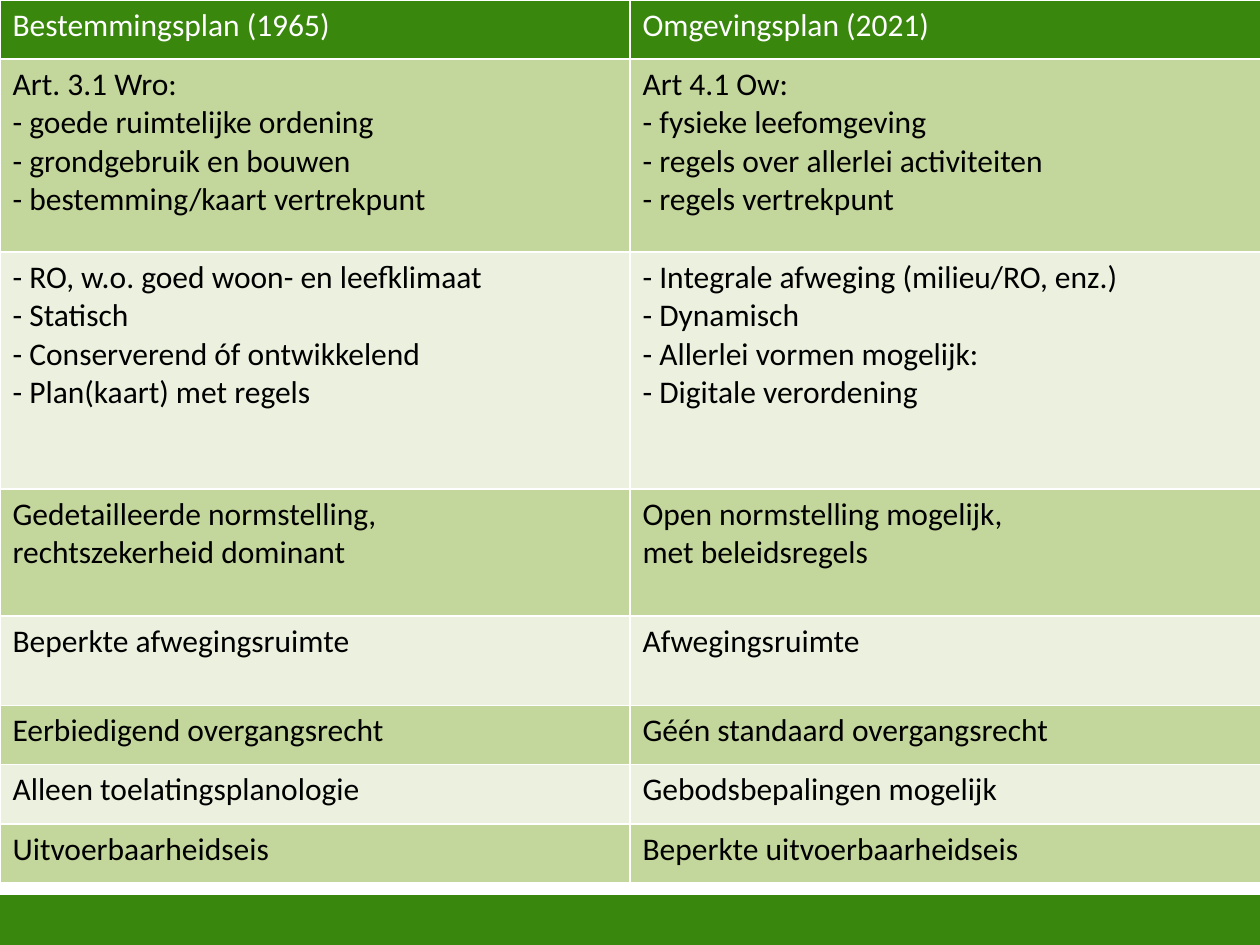
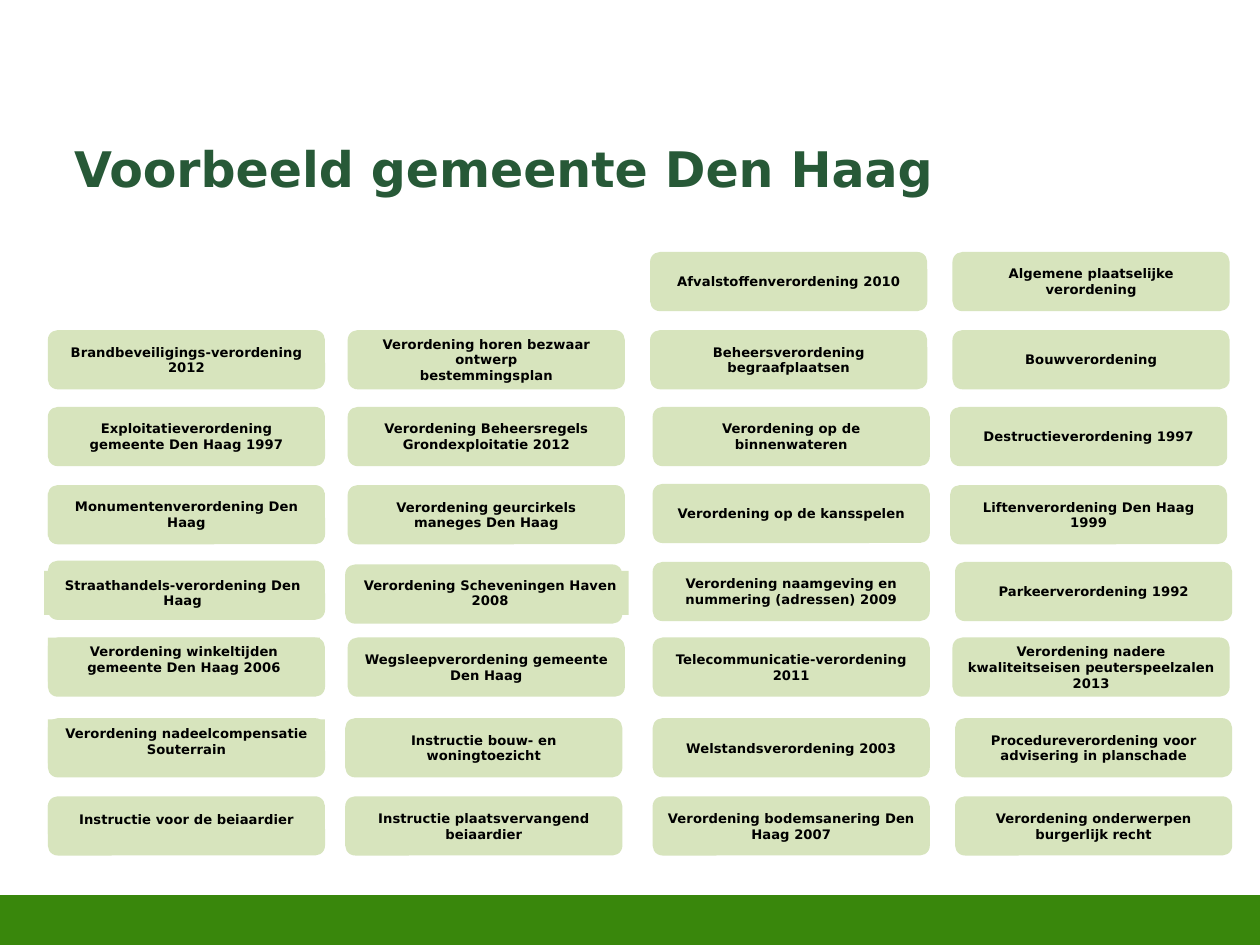
from lxml.etree import SubElement
from pptx import Presentation
from pptx.dml.color import RGBColor
from pptx.enum.shapes import MSO_SHAPE as Preset
from pptx.enum.text import MSO_ANCHOR as Anchor, MSO_AUTO_SIZE as AutoSize, PP_ALIGN as Align
from pptx.oxml.ns import qn
from pptx.util import Inches, Pt

GREEN, MOSS, PALE, BOX = "39870C", "C3D69B", "EBF1DE", "D7E4BD"
WHITE, BLACK, TITLE = "FFFFFF", "000000", "275937"

PLANS = [
    ("Bestemmingsplan (1965)", "Omgevingsplan (2021)"),
    ("Art. 3.1 Wro:\v- goede ruimtelijke ordening\v- grondgebruik en bouwen\v- bestemming/kaart vertrekpunt",
     "Art 4.1 Ow:\v- fysieke leefomgeving\v- regels over allerlei activiteiten\v- regels vertrekpunt"),
    ("- RO, w.o. goed woon- en leefklimaat\v- Statisch\v- Conserverend óf ontwikkelend\n- Plan(kaart) met regels",
     "- Integrale afweging (milieu/RO, enz.)\v- Dynamisch\v- Allerlei vormen mogelijk:\v- Digitale verordening"),
    ("Gedetailleerde normstelling,\vrechtszekerheid dominant",
     "Open normstelling mogelijk,\vmet beleidsregels"),
    ("Beperkte afwegingsruimte", "Afwegingsruimte"),
    ("Eerbiedigend overgangsrecht", "Géén standaard overgangsrecht"),
    ("Alleen toelatingsplanologie", "Gebodsbepalingen mogelijk"),
    ("Uitvoerbaarheidseis", "Beperkte uitvoerbaarheidseis"),
]
PLAN_WIDTHS = [5, 5.08]
PLAN_HEIGHTS = [0.47, 1.53, 1.88, 1.01, 0.71, 0.47, 0.47, 0.47]

BOX_TOPS = [2, 2.62, 3.23, 3.85, 4.46, 5.06, 5.7, 6.32]
BOX_LEFTS = [
    [0.38] * 8,
    [2.76, 2.76, 2.76, 2.76, 2.74, 2.76, 2.74, 2.74],
    [5.16] * 2 + [5.18] * 6,
    [7.56, 7.56, 7.54, 7.54, 7.58, 7.56, 7.58, 7.58],
]
SHIFTED_TOPS = {(0, 4): 4.45, (1, 4): 4.48, (2, 3): 3.84}
ORDINANCES = [
    [None, "Brandbeveiligings-verordening 2012", "Exploitatieverordening gemeente Den Haag 1997",
     "", "", "", "", ""],
    [None, "Verordening horen bezwaar ontwerp\nbestemmingsplan",
     "Verordening Beheersregels Grondexploitatie 2012", "Verordening geurcirkels maneges Den Haag", "",
     "Wegsleepverordening gemeente Den Haag", "Instructie bouw- en woningtoezicht",
     "Instructie plaatsvervangend beiaardier"],
    ["Afvalstoffenverordening 2010", "Beheersverordening begraafplaatsen",
     "Verordening op de binnenwateren", "Verordening op de kansspelen",
     "Verordening naamgeving en nummering (adressen) 2009", "Telecommunicatie-verordening 2011",
     "Welstandsverordening 2003", "Verordening bodemsanering Den Haag 2007"],
    ["Algemene plaatselijke verordening", "Bouwverordening", "Destructieverordening 1997",
     "Liftenverordening Den Haag 1999", "Parkeerverordening 1992",
     "Verordening nadere kwaliteitseisen peuterspeelzalen 2013",
     "Procedureverordening voor advisering in planschade", "Verordening onderwerpen burgerlijk recht"],
]
LABELS = [
    ("Monumentenverordening Den Haag", 0.38, 3.91, 2.2, 0.35),
    ("Straathandels-verordening Den Haag", 0.35, 4.53, 2.2, 0.35),
    ("Verordening winkeltijden gemeente Den Haag 2006", 0.38, 5.06, 2.16, 0.35),
    ("Verordening nadeelcompensatie Souterrain", 0.38, 5.71, 2.2, 0.35),
    ("Instructie voor de beiaardier", 0.38, 6.39, 2.2, 0.23),
    ("Verordening Scheveningen Haven 2008", 2.79, 4.53, 2.2, 0.35),
]


def rgb(value):
    return RGBColor.from_string(value)


def apply(target, formats):
    for name, value in formats.items():
        setattr(target, name, value)


class Deck:
    body = {"name": "Calibri", "size": Pt(18), "bold": False}
    heading = {"name": "DejaVu Sans", "size": Pt(28), "bold": True}
    caption = {"name": "DejaVu Sans", "size": Pt(7.5), "bold": True}
    box_frame = {"word_wrap": True, "margin_left": Inches(0.09), "margin_right": Inches(0.09),
                 "vertical_anchor": Anchor.MIDDLE}
    label_frame = {**box_frame, "vertical_anchor": Anchor.TOP, "auto_size": AutoSize.SHAPE_TO_FIT_TEXT}
    title_frame = {"word_wrap": True, "margin_top": Inches(0.09), "vertical_anchor": Anchor.TOP}

    def __init__(self):
        self.presentation = Presentation()
        self.presentation.slide_width, self.presentation.slide_height = Inches(10), Inches(7.5)

    def new_slide(self):
        self.slide = self.presentation.slides.add_slide(self.presentation.slide_layouts[6])
        band = self.shape(Preset.RECTANGLE, (0, 7.12, 10, 0.39), GREEN)
        band.line.color.rgb = rgb(GREEN)
        band.line.width = Pt(2)

    def fill_text(self, frame, text, font, color, align=Align.LEFT):
        frame.text = text
        for paragraph in frame.paragraphs:
            paragraph.alignment = align
            for run in paragraph.runs:
                apply(run.font, font)
                run.font.color.rgb = rgb(color)

    def shape(self, preset, place, fill):
        shape = self.slide.shapes.add_shape(preset, *map(Inches, place))
        shape.shadow.inherit = False
        shape.fill.solid()
        shape.fill.fore_color.rgb = rgb(fill)
        shape.line.fill.background()
        return shape

    def ordinance(self, text, place, preset, frame):
        box = self.shape(preset, place, BOX)
        apply(box.text_frame, frame)
        if text:
            self.fill_text(box.text_frame, text, self.caption, BLACK, Align.CENTER)

    def title(self, text):
        frame = self.slide.shapes.add_textbox(*map(Inches, (0.49, 1.01, 9, 0.73))).text_frame
        apply(frame, self.title_frame)
        self.fill_text(frame, text, self.heading, TITLE)

    def borders(self, cell):
        properties = cell._tc.get_or_add_tcPr()
        for edge in "LRTB":
            line = SubElement(properties, qn(f"a:ln{edge}"), w=str(Pt(1)))
            SubElement(SubElement(line, qn("a:solidFill")), qn("a:srgbClr"), val=WHITE)

    def table(self, rows, widths, heights):
        table = self.slide.shapes.add_table(
            len(rows), len(widths), 0, 0, Inches(sum(widths)), Inches(sum(heights))).table
        for column, width in zip(table.columns, widths):
            column.width = Inches(width)
        for index, (texts, height) in enumerate(zip(rows, heights)):
            table.rows[index].height = Inches(height)
            fill = (PALE, MOSS)[index % 2] if index else GREEN
            for cell, text in zip(table.rows[index].cells, texts):
                self.borders(cell)
                cell.fill.solid()
                cell.fill.fore_color.rgb = rgb(fill)
                self.fill_text(cell.text_frame, text, self.body, BLACK if index else WHITE)


def main():
    deck = Deck()
    deck.new_slide()
    deck.table(PLANS, PLAN_WIDTHS, PLAN_HEIGHTS)

    deck.new_slide()
    for column, (names, lefts) in enumerate(zip(ORDINANCES, BOX_LEFTS)):
        for row, (name, left, top) in enumerate(zip(names, lefts, BOX_TOPS)):
            if name is not None:
                place = (left, SHIFTED_TOPS.get((column, row), top), 2.2, 0.47)
                deck.ordinance(name, place, Preset.ROUNDED_RECTANGLE, deck.box_frame)
    for name, *place in LABELS:
        deck.ordinance(name, place, Preset.RECTANGLE, deck.label_frame)
    deck.title("Voorbeeld gemeente Den Haag")

    deck.presentation.save("out.pptx")


if __name__ == "__main__":
    main()
